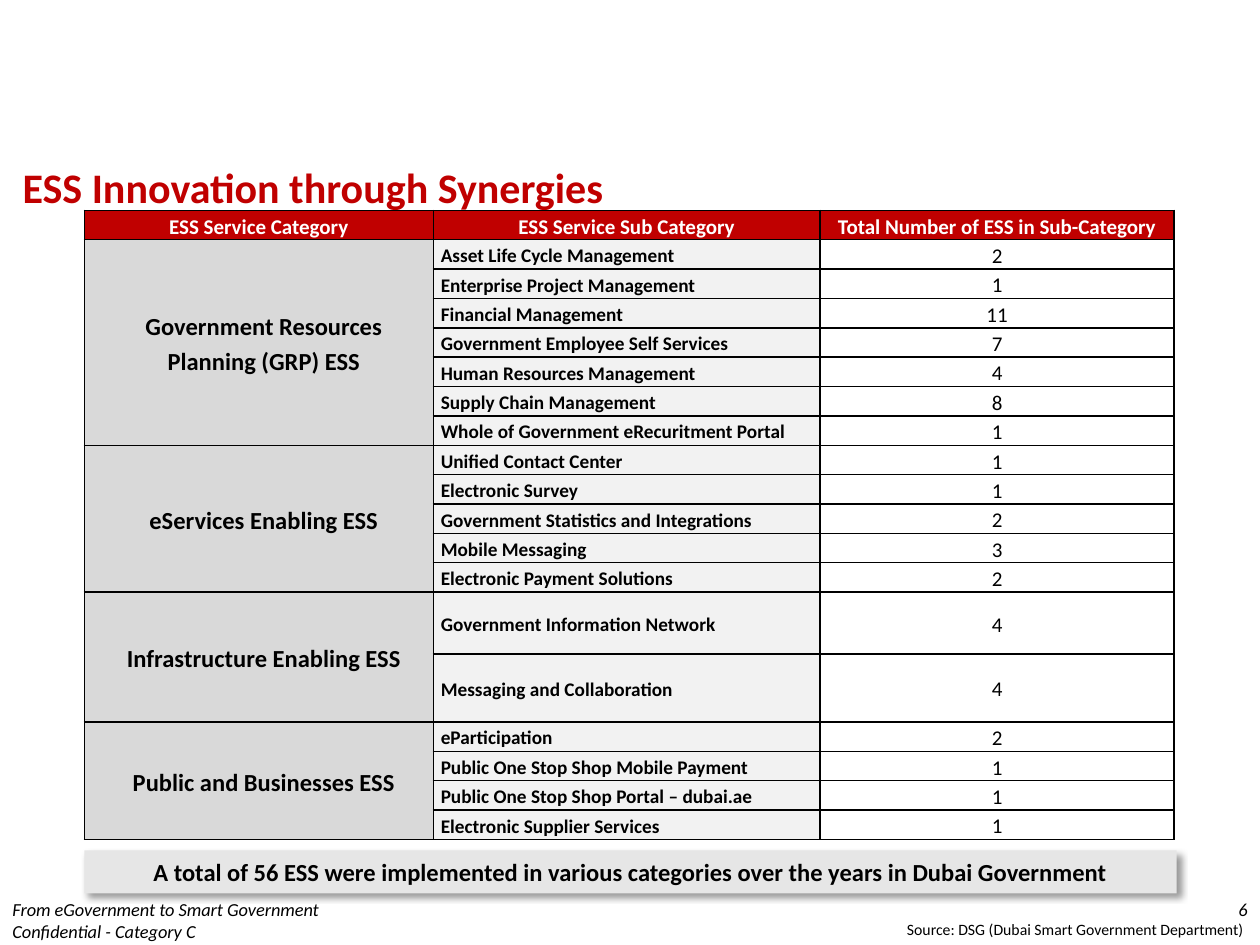
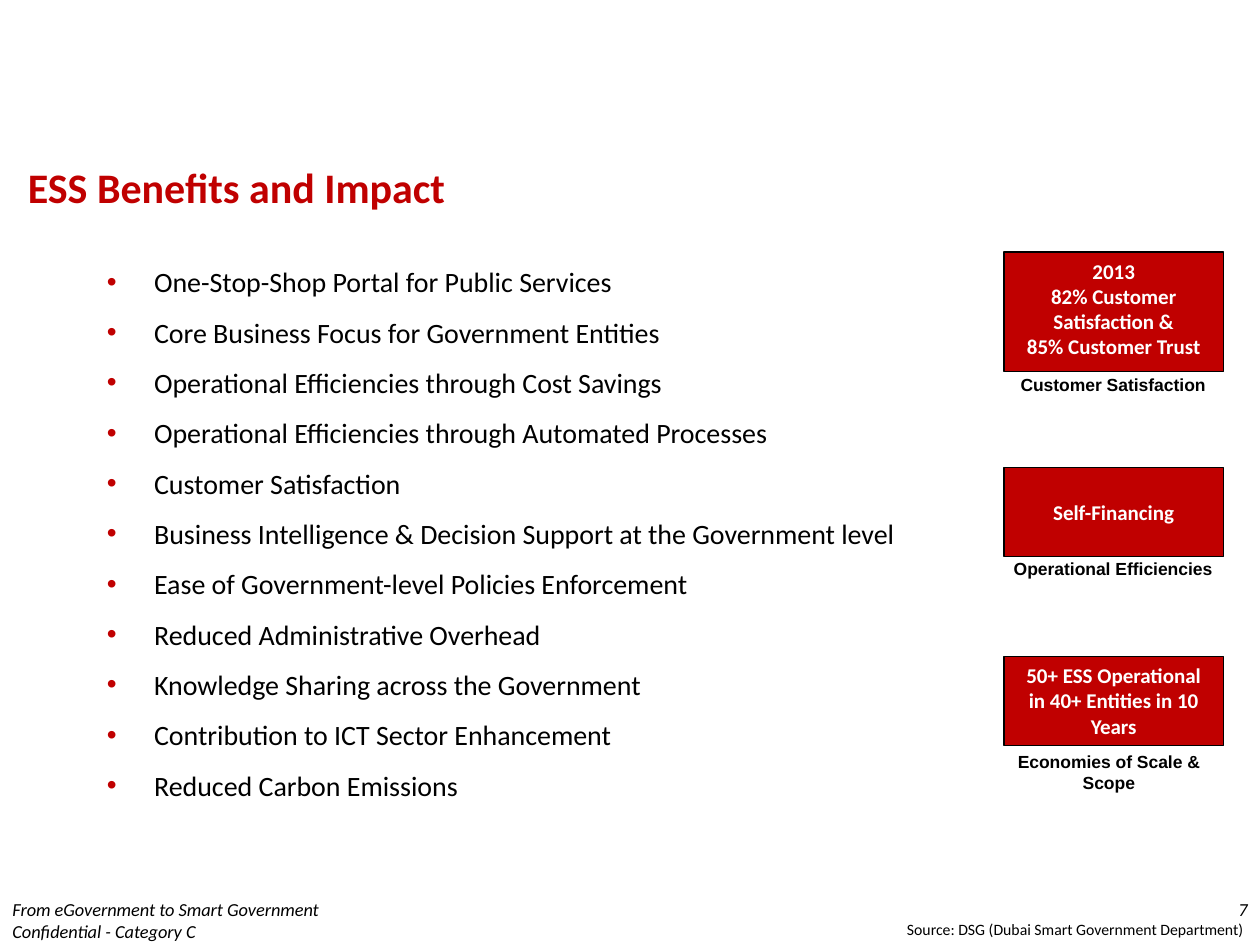
from dataclasses import dataclass

from lxml import etree
from pptx import Presentation
from pptx.dml.color import RGBColor
from pptx.enum.shapes import MSO_SHAPE
from pptx.enum.text import MSO_ANCHOR as Anchor, PP_ALIGN as Align
from pptx.oxml.ns import qn
from pptx.util import Pt

RED, BLACK, WHITE = "C00000", "000000", "FFFFFF"
BAR_GREY, CATEGORY_GREY, SERVICE_GREY = "E6E6E6", "D9D9D9", "F2F2F2"
BODY_FONT, CAPTION_FONT = "Calibri", "Arial"

ROW_HEIGHT = 16.8
COLUMN_WIDTHS = (199.4, 221, 202.4)
TABLE_HEADINGS = (
    "ESS Service Category",
    "ESS Service Sub Category",
    "Total Number of ESS in Sub-Category",
)


@dataclass(frozen=True)
class Box:
    left: float
    top: float
    width: float
    height: float

    def lengths(self) -> tuple:
        return Pt(self.left), Pt(self.top), Pt(self.width), Pt(self.height)


@dataclass(frozen=True)
class Category:
    name: str
    services: tuple[tuple[str, int], ...]
    row_heights: tuple[float, ...] = ()


@dataclass(frozen=True)
class Achievement:
    lines: tuple[str, ...]
    box: Box
    caption: str
    caption_box: Box
    anchor: Anchor = Anchor.TOP


CATEGORIES = (
    Category("Government Resources Planning (GRP) ESS", (
        ("Asset Life Cycle Management", 2),
        ("Enterprise Project Management", 1),
        ("Financial Management", 11),
        ("Government Employee Self Services", 7),
        ("Human Resources Management", 4),
        ("Supply Chain Management", 8),
        ("Whole of Government eRecuritment Portal", 1),
    )),
    Category("eServices Enabling ESS", (
        ("Unified Contact Center", 1),
        ("Electronic Survey", 1),
        ("Government Statistics and Integrations", 2),
        ("Mobile Messaging", 3),
        ("Electronic Payment Solutions", 2),
    )),
    Category("Infrastructure Enabling ESS", (
        ("Government Information Network", 4),
        ("Messaging and Collaboration", 4),
    ), (35.3, 38.9)),
    Category("Public and Businesses ESS", (
        ("eParticipation", 2),
        ("Public One Stop Shop Mobile Payment", 1),
        ("Public One Stop Shop Portal – dubai.ae", 1),
        ("Electronic Supplier Services", 1),
    )),
)

BENEFITS = (
    "One-Stop-Shop Portal for Public Services",
    "Core Business Focus for Government Entities",
    "Operational Efficiencies through Cost Savings",
    "Operational Efficiencies through Automated Processes",
    "Customer Satisfaction",
    "Business Intelligence & Decision Support at the Government level",
    "Ease of Government-level Policies Enforcement",
    "Reduced Administrative Overhead",
    "Knowledge Sharing across the Government",
    "Contribution to ICT Sector Enhancement",
    "Reduced Carbon Emissions",
)

ACHIEVEMENTS = (
    Achievement(
        ("2013", "82% Customer Satisfaction &", "85% Customer Trust"),
        Box(573.8, 144, 125.3, 68.4),
        "Customer Satisfaction", Box(569, 210.2, 134, 19.4),
    ),
    Achievement(
        ("Self-Financing",), Box(573.8, 267.1, 125.3, 51.1),
        "Operational Efficiencies", Box(569, 315.4, 134, 19.4), Anchor.MIDDLE,
    ),
    Achievement(
        ("50+ ESS Operational in 40+ Entities in 10 Years",),
        Box(573.8, 375.1, 125.3, 51.1),
        "Economies of Scale & Scope", Box(566.6, 425.5, 134, 31.7),
    ),
)


def rgb(color: str) -> RGBColor:
    return RGBColor.from_string(color)


def add_bullet(paragraph, color: str, indent: float) -> None:
    props = paragraph._p.get_or_add_pPr()
    props.set("marL", str(Pt(indent)))
    props.set("indent", str(-Pt(indent)))
    bullet_color = etree.SubElement(props, qn("a:buClr"))
    etree.SubElement(bullet_color, qn("a:srgbClr"), val=color)
    etree.SubElement(props, qn("a:buFont"), typeface="Arial")
    etree.SubElement(props, qn("a:buChar"), char="•")


def write(frame, *lines: str, size: float, color: str = BLACK,
          font: str = BODY_FONT, bold: bool = False, italic: bool = False,
          align: Align = Align.LEFT, anchor: Anchor = Anchor.TOP,
          spacing: float = 1.0, bullet_indent: float = 0) -> None:
    """Fill a text frame with one paragraph for each line."""
    frame.word_wrap = True
    frame.vertical_anchor = anchor
    for number, line in enumerate(lines):
        paragraph = frame.add_paragraph() if number else frame.paragraphs[0]
        if bullet_indent:
            add_bullet(paragraph, RED, bullet_indent)
        paragraph.alignment = align
        paragraph.line_spacing = spacing
        run = paragraph.add_run()
        run.text = line
        run.font.name, run.font.size = font, Pt(size)
        run.font.bold, run.font.italic = bold, italic
        run.font.color.rgb = rgb(color)


def add_text(slide, box: Box, *lines: str, **style) -> None:
    write(slide.shapes.add_textbox(*box.lengths()).text_frame, *lines, **style)


def add_panel(slide, box: Box, fill: str, border: str = ""):
    panel = slide.shapes.add_shape(MSO_SHAPE.RECTANGLE, *box.lengths())
    panel.shadow.inherit = False
    panel.fill.solid()
    panel.fill.fore_color.rgb = rgb(fill)
    if border:
        panel.line.color.rgb = rgb(border)
        panel.line.width = Pt(0.75)
    else:
        panel.line.fill.background()
    return panel


def add_drop_shadow(shape) -> None:
    effects = shape._element.spPr.find(qn("a:effectLst"))
    shadow = etree.SubElement(
        effects, qn("a:outerShdw"), blurRad=str(Pt(4)), dist=str(Pt(3)),
        dir="2700000", algn="tl", rotWithShape="0")
    shade = etree.SubElement(shadow, qn("a:srgbClr"), val=BLACK)
    etree.SubElement(shade, qn("a:alpha"), val="40000")


def add_page(deck, title: str, title_box: Box, number: int):
    """Add a blank slide with its title, footer, page number and source."""
    slide = deck.slides.add_slide(deck.slide_layouts[6])
    add_text(slide, title_box, title, size=24, color=RED, bold=True,
             anchor=Anchor.MIDDLE)
    add_text(slide, Box(511.2, 522, 208.8, 18),
             "Source: DSG (Dubai Smart Government Department)", size=9)
    add_text(slide, Box(570, 509.8, 150, 30), str(number), size=10.5,
             italic=True, align=Align.RIGHT)
    add_text(slide, Box(0, 509.8, 278, 30),
             "From eGovernment to Smart Government",
             "Confidential - Category C", size=10.5, italic=True)
    return slide


def style_cell(cell, fill: str = "") -> None:
    cell.margin_left = cell.margin_right = Pt(4.3)
    cell.margin_top = cell.margin_bottom = 0
    props = cell._tc.get_or_add_tcPr()
    for side in ("lnL", "lnR", "lnT", "lnB"):
        border = etree.SubElement(props, qn(f"a:{side}"), w=str(Pt(1)))
        paint = etree.SubElement(border, qn("a:solidFill"))
        etree.SubElement(paint, qn("a:srgbClr"), val=BLACK)
    if fill:
        cell.fill.solid()
        cell.fill.fore_color.rgb = rgb(fill)
    else:
        cell.fill.background()


def write_cell(cell, text: str, **style) -> None:
    write(cell.text_frame, text, spacing=1.15, **style)
    cell.vertical_anchor = Anchor.MIDDLE


def add_service_table(slide) -> None:
    heights = [ROW_HEIGHT]
    for category in CATEGORIES:
        heights += category.row_heights or [ROW_HEIGHT] * len(category.services)
    box = Box(48.2, 120.2, sum(COLUMN_WIDTHS), sum(heights))
    table = slide.shapes.add_table(
        len(heights), len(COLUMN_WIDTHS), *box.lengths()).table
    table.first_row = table.horz_banding = False
    for column, width in zip(table.columns, COLUMN_WIDTHS):
        column.width = Pt(width)
    for row, height in zip(table.rows, heights):
        row.height = Pt(height)

    for column, heading in enumerate(TABLE_HEADINGS):
        cell = table.cell(0, column)
        style_cell(cell, RED)
        write_cell(cell, heading, size=12, color=WHITE, bold=True,
                   align=Align.CENTER)

    first = 1
    for category in CATEGORIES:
        for row, (service, count) in enumerate(category.services, first):
            category_cell, service_cell, count_cell = table.rows[row].cells
            style_cell(category_cell, CATEGORY_GREY)
            style_cell(service_cell, SERVICE_GREY)
            style_cell(count_cell)
            write_cell(service_cell, service, size=11, bold=True)
            write_cell(count_cell, str(count), size=12, align=Align.CENTER)
        name_cell = table.cell(first, 0)
        name_cell.merge(table.cell(row, 0))
        name_cell.margin_left = Pt(10)
        write_cell(name_cell, category.name, size=14, bold=True,
                   align=Align.CENTER)
        first = row + 1


def build_synergies(deck) -> None:
    slide = add_page(deck, "ESS Innovation through Synergies",
                     Box(5.8, 86.5, 630, 40.3), 6)
    total = add_panel(slide, Box(48.2, 486, 624.2, 24.5), BAR_GREY)
    add_drop_shadow(total)
    write(total.text_frame,
          "A total of 56 ESS were implemented in various categories "
          "over the years in Dubai Government",
          size=14, bold=True, align=Align.CENTER, anchor=Anchor.MIDDLE)
    add_service_table(slide)


def build_benefits(deck) -> None:
    slide = add_page(deck, "ESS Benefits and Impact",
                     Box(8.8, 75, 627, 63.4), 7)
    for item in ACHIEVEMENTS:
        add_text(slide, item.caption_box, item.caption, size=10, bold=True,
                 font=CAPTION_FONT, align=Align.CENTER)
        panel = add_panel(slide, item.box, RED, BLACK)
        write(panel.text_frame, *item.lines, size=12, color=WHITE, bold=True,
              align=Align.CENTER, anchor=item.anchor)
    add_text(slide, Box(54, 138.2, 474, 324), *BENEFITS, size=16,
             spacing=1.5, bullet_indent=27)


def main() -> None:
    deck = Presentation()
    deck.slide_width, deck.slide_height = Pt(720), Pt(540)
    build_synergies(deck)
    build_benefits(deck)
    deck.save("out.pptx")


if __name__ == "__main__":
    main()
